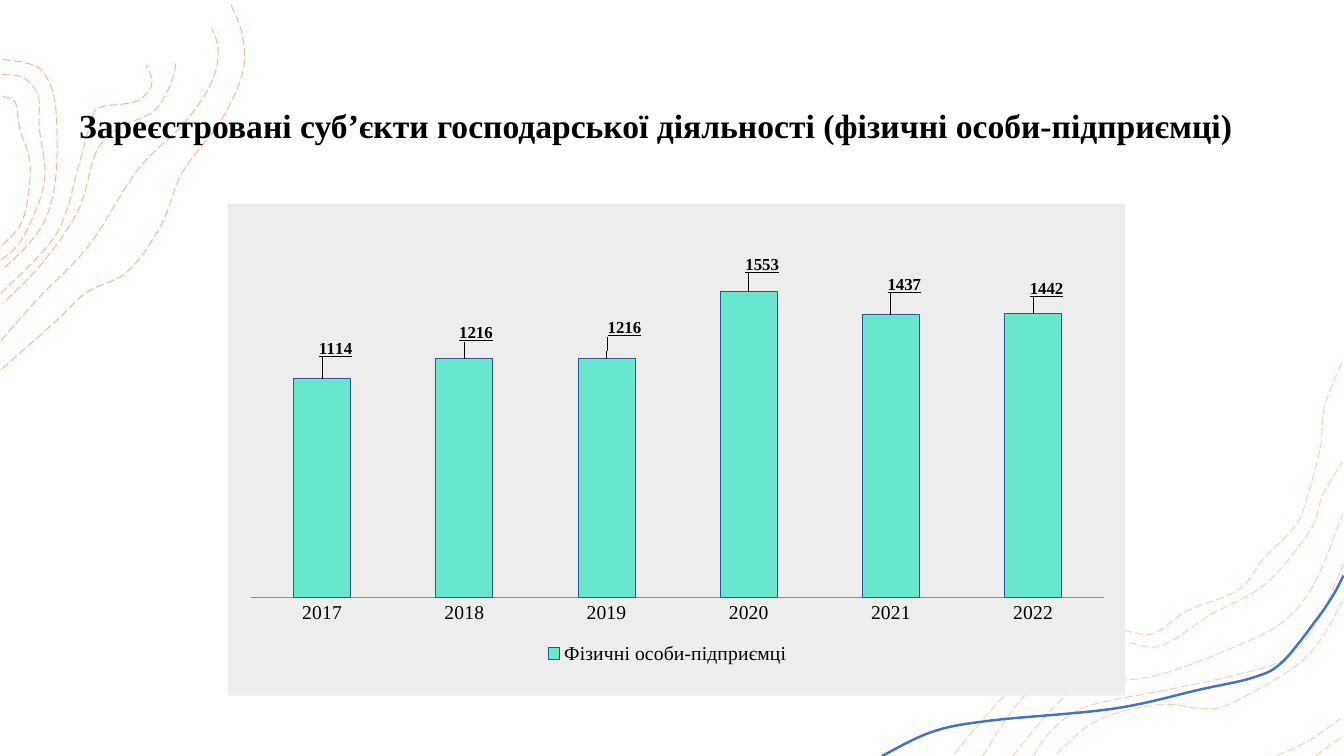
"""Build a slide with a column chart of registered sole proprietors by year."""
from dataclasses import dataclass
from typing import Any

from lxml import etree
from pptx import Presentation, oxml, util as u
from pptx.chart.data import CategoryChartData
from pptx.dml.color import RGBColor
from pptx.enum import chart as charts, dml, text
from pptx.oxml import ns

ORANGE = RGBColor(0xED, 0x7D, 0x31)
BLUE = RGBColor(0x44, 0x72, 0xC4)
NAVY = RGBColor(0x2F, 0x55, 0x97)
MINT = RGBColor(0x69, 0xE7, 0xCC)
GREY = RGBColor(0x8B, 0x8B, 0x8B)
BLACK = RGBColor(0, 0, 0)
WHITE = RGBColor(0xFF, 0xFF, 0xFF)
PANEL = "EDEDED"
SERIF = "Times New Roman"
TITLE = "Зареєстровані суб’єкти господарської діяльності (фізичні особи-підприємці)"
SERIES = "Фізичні особи-підприємці"
GRID = 0.0254

Point = tuple[float, float]


@dataclass(frozen=True)
class Contour:
    """A smooth curve through points measured in grid units."""
    points: tuple[Point, ...]
    alpha: int = 50
    color: RGBColor = ORANGE
    width: float = 0.75
    dash: Any = dml.MSO_LINE.LONG_DASH


@dataclass(frozen=True)
class Year:
    """A column and the shift of its label as a share of the chart."""
    name: str
    value: int
    shift: Point


YEARS = (
    Year("2017", 1114, (0.015, -0.035)),
    Year("2018", 1216, (0.013, -0.025)),
    Year("2019", 1216, (0.02, -0.035)),
    Year("2020", 1553, (0.015, -0.03)),
    Year("2021", 1437, (0.015, -0.035)),
    Year("2022", 1442, (0.015, -0.025)),
)

LEFT_CONTOURS = (
    Contour(((2, 366), (55, 319), (86, 290), (127, 269), (160, 223), (181, 171),
             (219, 120), (241, 71), (240, 33), (228, 2))),
    Contour(((1, 338), (38, 296), (88, 244), (137, 168), (183, 122), (212, 77),
             (214, 37), (187, 2))),
    Contour(((127, 2), (141, 26), (165, 46), (174, 67), (155, 108), (116, 128),
             (95, 152), (78, 208), (42, 261), (3, 301))),
    Contour(((1, 291), (56, 232), (78, 165), (92, 115), (101, 106), (124, 103),
             (140, 98), (151, 81), (138, 57), (98, 35), (102, 2))),
    Contour(((3, 59), (28, 63), (44, 73), (55, 104), (56, 168), (48, 210), (31, 239),
             (2, 268))),
    Contour(((2, 74), (23, 77), (38, 95), (39, 126), (44, 181), (22, 237), (1, 258))),
    Contour(((3, 96), (15, 101), (20, 129), (30, 165), (23, 217), (3, 243))),
)
TOP_MASK = ((221, 0), (196, 49), (148, 65), (100, 49), (76, 0))
RIGHT_CONTOURS = (
    Contour(((947, 748), (976, 713), (1008, 680), (1062, 643), (1103, 625), (1143, 629),
             (1178, 606), (1229, 585), (1254, 554), (1285, 522), (1297, 493),
             (1310, 444), (1314, 404), (1332, 358)), 35),
    Contour(((975, 750), (1013, 694), (1055, 662), (1109, 638), (1151, 641), (1201, 610),
             (1256, 579), (1300, 526), (1312, 492), (1332, 458)), 35),
    Contour(((1305, 750), (1333, 730)), 35),
    Contour(((1267, 750), (1300, 734), (1330, 713)), 35),
    Contour(((1048, 748), (1090, 714), (1151, 699), (1193, 703), (1223, 697),
             (1295, 653), (1332, 597)), 35),
    Contour(((1025, 750), (1044, 724), (1078, 701), (1154, 685), (1220, 671),
             (1276, 653), (1308, 615), (1333, 559)), 35),
    Contour(((1005, 750), (1047, 700), (1077, 680), (1148, 670), (1222, 643),
             (1273, 617), (1305, 577), (1332, 510)), 35),
    Contour(((875, 750), (925, 726), (982, 715), (1105, 703), (1191, 684), (1244, 672),
             (1272, 657), (1306, 615), (1323, 590), (1333, 571)),
            100, BLUE, 1.75, dml.MSO_LINE.SOLID),
)


def apply(target: Any, values: dict[str, Any]) -> None:
    """Set each attribute of the target."""
    for name, value in values.items():
        setattr(target, name, value)


def style_font(font: Any, size: float, name: str = SERIF, **values: Any) -> None:
    """Give a font its size, face and colour."""
    apply(font, {"size": u.Pt(size), "name": name, **values})
    font.color.rgb = BLACK


def smooth(shape: Any) -> None:
    """Turn the straight segments of a freeform into cubic curves."""
    points = [(int(point.get("x")), int(point.get("y")))
              for point in shape.element.xpath(".//a:path//a:pt")]
    padded = (points[0], *points, points[-1])
    segments = zip(shape.element.xpath(".//a:lnTo"), padded, padded[1:], padded[2:], padded[3:])
    for line, a, b, c, d in segments:
        line.tag = ns.qn("a:cubicBezTo")
        controls = ([q + (r - p) / 6 for p, q, r in zip(a, b, c)],
                    [r - (s - q) / 6 for q, r, s in zip(b, c, d)])
        for position, (x, y) in enumerate(controls):
            line.insert(position, etree.Element(ns.qn("a:pt"), x=str(round(x)), y=str(round(y))))


def add_curve(slide: Any, points: tuple[Point, ...], close: bool = False) -> Any:
    """Add a smooth freeform without a shadow."""
    corners = [(u.Cm(x * GRID), u.Cm(y * GRID)) for x, y in points]
    builder = slide.shapes.build_freeform(*corners[0])
    builder.add_line_segments(corners[1:], close=close)
    shape = builder.convert_to_shape()
    shape.shadow.inherit = False
    smooth(shape)
    return shape


def add_contour(slide: Any, contour: Contour) -> None:
    """Draw one contour line."""
    shape = add_curve(slide, contour.points)
    shape.fill.background()
    shape.line.color.rgb = contour.color
    apply(shape.line, {"width": u.Pt(contour.width), "dash_style": contour.dash})
    color = shape.element.xpath(".//a:ln//a:srgbClr")[0]
    etree.SubElement(color, ns.qn("a:alpha")).set("val", str(contour.alpha * 1000))


def add_mask(slide: Any) -> None:
    """Clear the area at the top edge."""
    shape = add_curve(slide, TOP_MASK, close=True)
    shape.fill.solid()
    shape.fill.fore_color.rgb = WHITE
    shape.line.fill.background()


def add_title(slide: Any) -> None:
    """Write the slide title."""
    box = slide.shapes.add_textbox(u.Cm(1.12), u.Cm(1.93), u.Cm(30.81), u.Cm(2.57))
    apply(box.text_frame, {"word_wrap": True, "vertical_anchor": text.MSO_ANCHOR.MIDDLE})
    paragraph = box.text_frame.paragraphs[0]
    apply(paragraph, {"text": TITLE, "alignment": text.PP_ALIGN.CENTER, "line_spacing": 0.9})
    style_font(paragraph.runs[0].font, 24, bold=True)


def layout(**values: Any) -> Any:
    """Make a manual chart layout."""
    items = "".join(f'<c:{name} val="{value}"/>' for name, value in values.items())
    return oxml.parse_xml(f'<c:layout {ns.nsdecls("c")}><c:manualLayout>{items}'
                          '</c:manualLayout></c:layout>')


def add_column_chart(slide: Any) -> None:
    """Draw the columns with their labels, axis and legend."""
    data = CategoryChartData()
    data.categories = [year.name for year in YEARS]
    data.add_series(SERIES, [year.value for year in YEARS])
    chart = slide.shapes.add_chart(charts.XL_CHART_TYPE.COLUMN_CLUSTERED, u.Cm(5.74),
                                   u.Cm(5.13), u.Cm(22.61), u.Cm(12.4), data).chart
    apply(chart, {"has_title": False, "has_legend": True})
    style_font(chart.font, 10, "Calibri")
    apply(chart.value_axis, {"visible": False, "has_major_gridlines": False,
                             "minimum_scale": 0, "maximum_scale": 1800})
    chart.category_axis.major_tick_mark = charts.XL_TICK_MARK.NONE
    chart.category_axis.format.line.color.rgb = GREY
    style_font(chart.category_axis.tick_labels.font, 14)
    apply(chart.legend, {"position": charts.XL_LEGEND_POSITION.TOP, "include_in_layout": False})
    style_font(chart.legend.font, 14)
    apply(chart.plots[0], {"gap_width": 150, "vary_by_categories": False})
    series = chart.plots[0].series[0]
    series.format.fill.solid()
    series.format.fill.fore_color.rgb = MINT
    series.format.line.color.rgb = NAVY
    series.format.line.width = u.Pt(0.75)
    for index, year in enumerate(YEARS):
        label = series.points[index].data_label
        style_font(label.font, 12, bold=True, underline=True)
        label.position = charts.XL_LABEL_POSITION.OUTSIDE_END
    for year, mark in zip(YEARS, chart.element.xpath(".//c:dLbl/c:idx")):
        mark.addnext(layout(x=year.shift[0], y=year.shift[1]))
    for old in chart.element.xpath(".//c:plotArea/c:layout | .//c:legend/c:layout"):
        old.getparent().remove(old)
    chart.element.xpath(".//c:plotArea")[0].insert(0, layout(
        layoutTarget="inner", xMode="edge", yMode="edge", x=0.026, y=0.081, w=0.951, h=0.72))
    chart.element.xpath(".//c:legendPos")[0].addnext(layout(
        xMode="edge", yMode="edge", x=0.35, y=0.88, w=0.28, h=0.07))
    chart.element.xpath("c:chart")[0].addnext(oxml.parse_xml(
        f'<c:spPr {ns.nsdecls("c", "a")}><a:solidFill><a:srgbClr val="{PANEL}"/></a:solidFill>'
        '<a:ln><a:noFill/></a:ln></c:spPr>'))


def main() -> None:
    """Build and save the presentation."""
    presentation = Presentation()
    apply(presentation, {"slide_width": u.Cm(33.87), "slide_height": u.Cm(19.05)})
    slide = presentation.slides.add_slide(presentation.slide_layouts[6])
    for contour in LEFT_CONTOURS:
        add_contour(slide, contour)
    add_mask(slide)
    for contour in RIGHT_CONTOURS:
        add_contour(slide, contour)
    add_title(slide)
    add_column_chart(slide)
    presentation.save("out.pptx")


if __name__ == "__main__":
    main()
